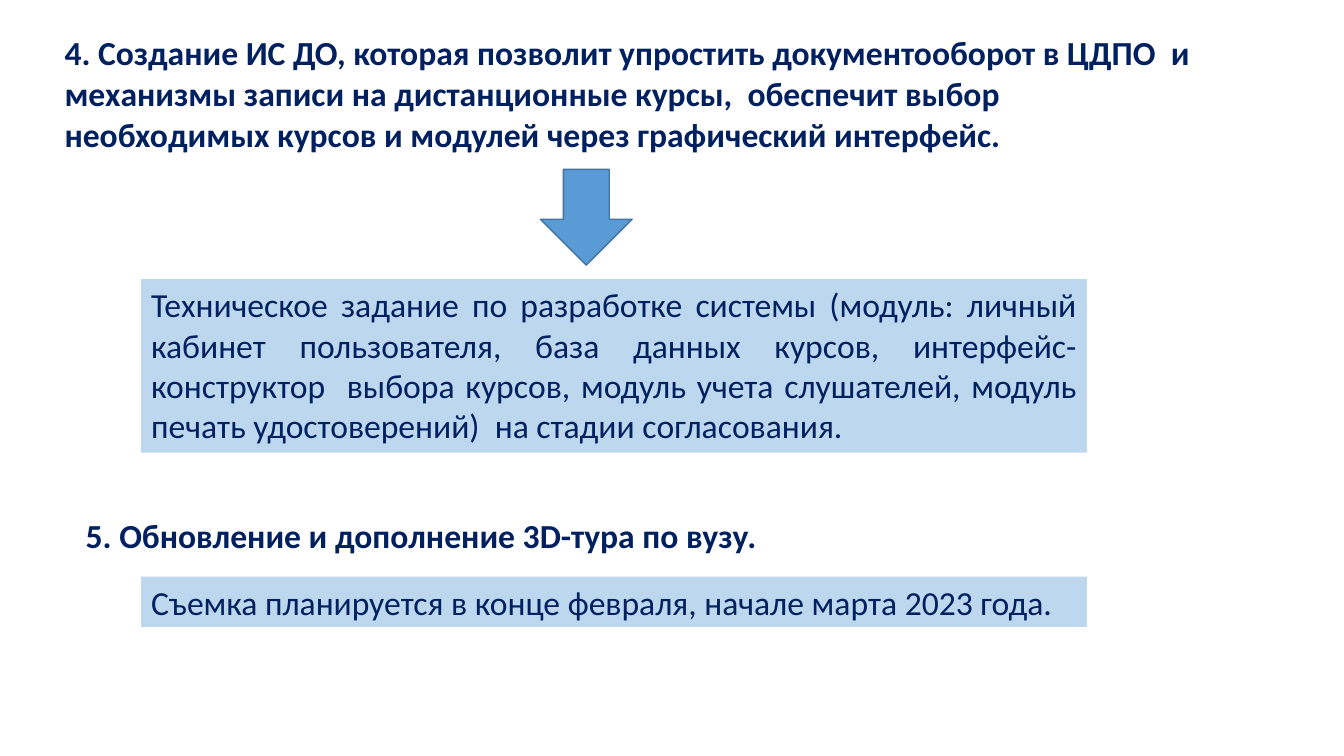
from dataclasses import dataclass

from pptx import Presentation
from pptx import util as u
from pptx.dml.color import RGBColor
from pptx.enum import shapes, text
from pptx.oxml import parse_xml
from pptx.oxml.ns import nsdecls


@dataclass(frozen=True)
class Theme:
    font: str = "Calibri"
    size: int = 24
    ink: str = "002060"
    panel: str = "BDD7EE"
    arrow: str = "5B9BD5"
    arrow_edge: str = "43739E"
    border: str = "FFFFFF"


theme = Theme()
PANEL_LEFT, PANEL_WIDTH = 1.4, 9.38
HEADING_WIDTH = 11.4
BORDERS = {"lnL": 1, "lnR": 1, "lnT": 1, "lnB": 3}

headings = [
    (0.57, 0.33, 1.2,
     "4. Создание ИС ДО, которая позволит упростить документооборот в ЦДПО  и "
     "механизмы записи на дистанционные курсы,  обеспечит выбор необходимых "
     "курсов и модулей через графический интерфейс."),
    (0.78, 5.12, 0.4, "5. Обновление и дополнение 3D-тура по вузу."),
]
panels = [
    (2.77, 1.72,
     "Техническое задание по разработке системы (модуль: личный кабинет "
     "пользователя, база данных курсов, интерфейс-конструктор  выбора курсов, "
     "модуль учета слушателей, модуль печать удостоверений)  на стадии согласования."),
    (5.72, 0.5, "Съемка планируется в конце февраля, начале марта 2023 года."),
]


def write(frame, wording, bold, align):
    frame.word_wrap = True
    paragraph = frame.paragraphs[0]
    paragraph.alignment = align
    run = paragraph.add_run()
    run.text = wording
    style = {"name": theme.font, "size": u.Pt(theme.size), "bold": bold}
    for name, value in style.items():
        setattr(run.font, name, value)
    run.font.color.rgb = RGBColor.from_string(theme.ink)


prs = Presentation()
prs.slide_width, prs.slide_height = u.Inches(13.33), u.Inches(7.5)
slide = prs.slides.add_slide(prs.slide_layouts[6])

for left, top, height, wording in headings:
    table = slide.shapes.add_table(
        1, 1, u.Inches(left), u.Inches(top), u.Inches(HEADING_WIDTH), u.Inches(height)
    ).table
    table.first_row = table.horz_banding = False
    cell = table.cell(0, 0)
    margins = {"margin_left": 0.07, "margin_right": 0.07,
               "margin_top": 0, "margin_bottom": 0}
    for name, value in margins.items():
        setattr(cell, name, u.Inches(value))
    write(cell.text_frame, wording, True, text.PP_ALIGN.LEFT)
    cell.fill.background()
    # Cell borders must come before the fill
    for position, (side, points) in enumerate(BORDERS.items()):
        cell._tc.tcPr.insert(position, parse_xml(
            f'<a:{side} {nsdecls("a")} w="{u.Pt(points)}"><a:solidFill>'
            f'<a:srgbClr val="{theme.border}"/></a:solidFill></a:{side}>'))

for top, height, wording in panels:
    panel = slide.shapes.add_shape(
        shapes.MSO_SHAPE.RECTANGLE, u.Inches(PANEL_LEFT), u.Inches(top),
        u.Inches(PANEL_WIDTH), u.Inches(height))
    panel.shadow.inherit = False
    panel.fill.solid()
    panel.fill.fore_color.rgb = RGBColor.from_string(theme.panel)
    panel.line.fill.background()
    panel.text_frame.auto_size = text.MSO_AUTO_SIZE.SHAPE_TO_FIT_TEXT
    panel.text_frame.vertical_anchor = text.MSO_ANCHOR.TOP
    write(panel.text_frame, wording, False, text.PP_ALIGN.JUSTIFY)

arrow = slide.shapes.add_shape(
    shapes.MSO_SHAPE.DOWN_ARROW, u.Inches(5.36), u.Inches(1.68),
    u.Inches(0.91), u.Inches(0.95))
arrow.shadow.inherit = False
arrow.fill.solid()
arrow.fill.fore_color.rgb = RGBColor.from_string(theme.arrow)
arrow.line.color.rgb = RGBColor.from_string(theme.arrow_edge)
arrow.line.width = u.Pt(1)

prs.save("out.pptx")
